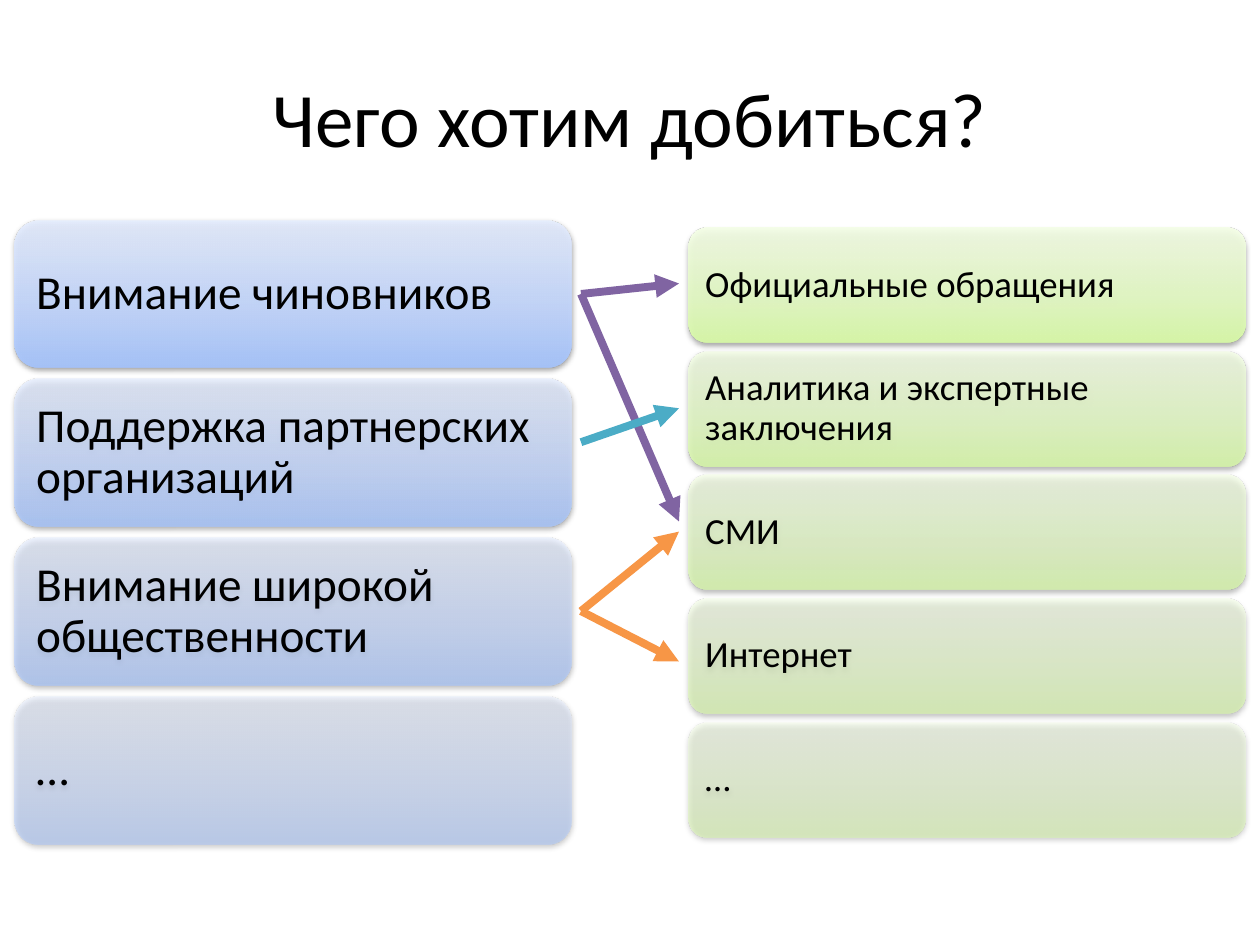
from pptx import Presentation
from pptx.dml.color import RGBColor
from pptx.enum.shapes import MSO_CONNECTOR as Connector, MSO_SHAPE as Shape
from pptx.enum.text import MSO_ANCHOR as Anchor, PP_ALIGN as Align
from pptx.oxml import parse_xml
from pptx.oxml.ns import nsdecls
from pptx.util import Pt

COLORS = {
    "text": "000000", "shadow": "000000",
    "purple": "8064A2", "teal": "4BACC6", "orange": "F79646",
    "blue_dark": "A4C4FF", "blue_mid": "BFD4FF", "blue_light": "E6EEFF",
    "green_dark": "DAFDA7", "green_mid": "E4FCC2", "green_light": "F5FFE7",
}
FONT = "Calibri"
GOALS = ["Внимание чиновников", "Поддержка партнерских организаций",
         "Внимание широкой общественности", "…"]
TOOLS = ["Официальные обращения", "Аналитика и экспертные заключения",
         "СМИ", "Интернет", "…"]
LINKS = [("purple", 168, 162), ("purple", 168, 298), ("teal", 252.7, 233.3),
         ("orange", 349.2, 303.8), ("orange", 349.2, 378)]


def write_text(frame, text, size, align, inset, spacing):
    formats = {"word_wrap": True, "vertical_anchor": Anchor.MIDDLE}
    for side in ("left", "right", "top", "bottom"):
        formats[f"margin_{side}"] = Pt(inset)
    for name, value in formats.items():
        setattr(frame, name, value)
    para = frame.paragraphs[0]
    para.alignment = align
    para.line_spacing = spacing
    span = para.add_run()
    span.text = text
    for name, value in {"name": FONT, "size": Pt(size)}.items():
        setattr(span.font, name, value)
    span.font.color.rgb = RGBColor.from_string(COLORS["text"])


def add_title(page, box, text):
    title = page.shapes.title
    for name, value in zip(("left", "top", "width", "height"), box):
        setattr(title, name, Pt(value))
    write_text(title.text_frame, text, 44, Align.CENTER, 3.6, 1.0)


def style_card(card, tint, opacity):
    card.shadow.inherit = False
    card.line.fill.background()
    stops = "".join(
        f'<a:gs pos="{place * 1000}"><a:srgbClr val="{COLORS[f"{tint}_{tone}"]}">'
        f'<a:alpha val="{round(opacity * 1000)}"/></a:srgbClr></a:gs>'
        for place, tone in ((0, "dark"), (35, "mid"), (100, "light")))
    gradient = parse_xml(
        f'<a:gradFill {nsdecls("a")} rotWithShape="1"><a:gsLst>{stops}</a:gsLst>'
        '<a:lin ang="16200000" scaled="0"/></a:gradFill>')
    shadow = parse_xml(
        f'<a:outerShdw {nsdecls("a")} blurRad="{Pt(3.1)}" dist="{Pt(1.6)}" '
        'dir="5400000" rotWithShape="0">'
        f'<a:srgbClr val="{COLORS["shadow"]}"><a:alpha val="38000"/></a:srgbClr>'
        '</a:outerShdw>')
    properties = card.element.spPr
    properties.insert(2, gradient)
    properties[-1].append(shadow)


def add_cards(page, box, texts, tint, size, gap):
    left, top, width, height = box
    card_height = (height - gap * (len(texts) - 1)) / len(texts)
    for index, text in enumerate(texts):
        card = page.shapes.add_shape(
            Shape.ROUNDED_RECTANGLE, Pt(left), Pt(top + index * (card_height + gap)),
            Pt(width), Pt(card_height))
        style_card(card, tint, 90 - 40 * index / (len(texts) - 1))
        write_text(card.text_frame, text, size, Align.LEFT, size * 0.3, 0.9)


def add_arrows(page, box, links):
    left, width = box
    for color, start, end in links:
        arrow = page.shapes.add_connector(
            Connector.STRAIGHT, Pt(left), Pt(start), Pt(left + width), Pt(end))
        arrow.line.width = Pt(4.5)
        arrow.line.color.rgb = RGBColor.from_string(COLORS[color])
        arrow.line._get_or_add_ln().append(
            parse_xml(f'<a:tailEnd {nsdecls("a")} type="triangle"/>'))
        arrow.element.spPr.append(parse_xml(f'<a:effectLst {nsdecls("a")}/>'))


def main():
    deck = Presentation()
    deck.slide_width, deck.slide_height = Pt(720), Pt(540)
    page = deck.slides.add_slide(deck.slide_layouts[5])
    add_title(page, (36, 21.6, 648, 90), "Чего хотим добиться?")
    add_cards(page, (8.5, 126, 318.2, 356.3), GOALS, "blue", 27, 6.5)
    add_cards(page, (393.5, 130.3, 318.2, 347.9), TOOLS, "green", 21, 5.1)
    add_arrows(page, (332, 56), LINKS)
    deck.save("out.pptx")


if __name__ == "__main__":
    main()
